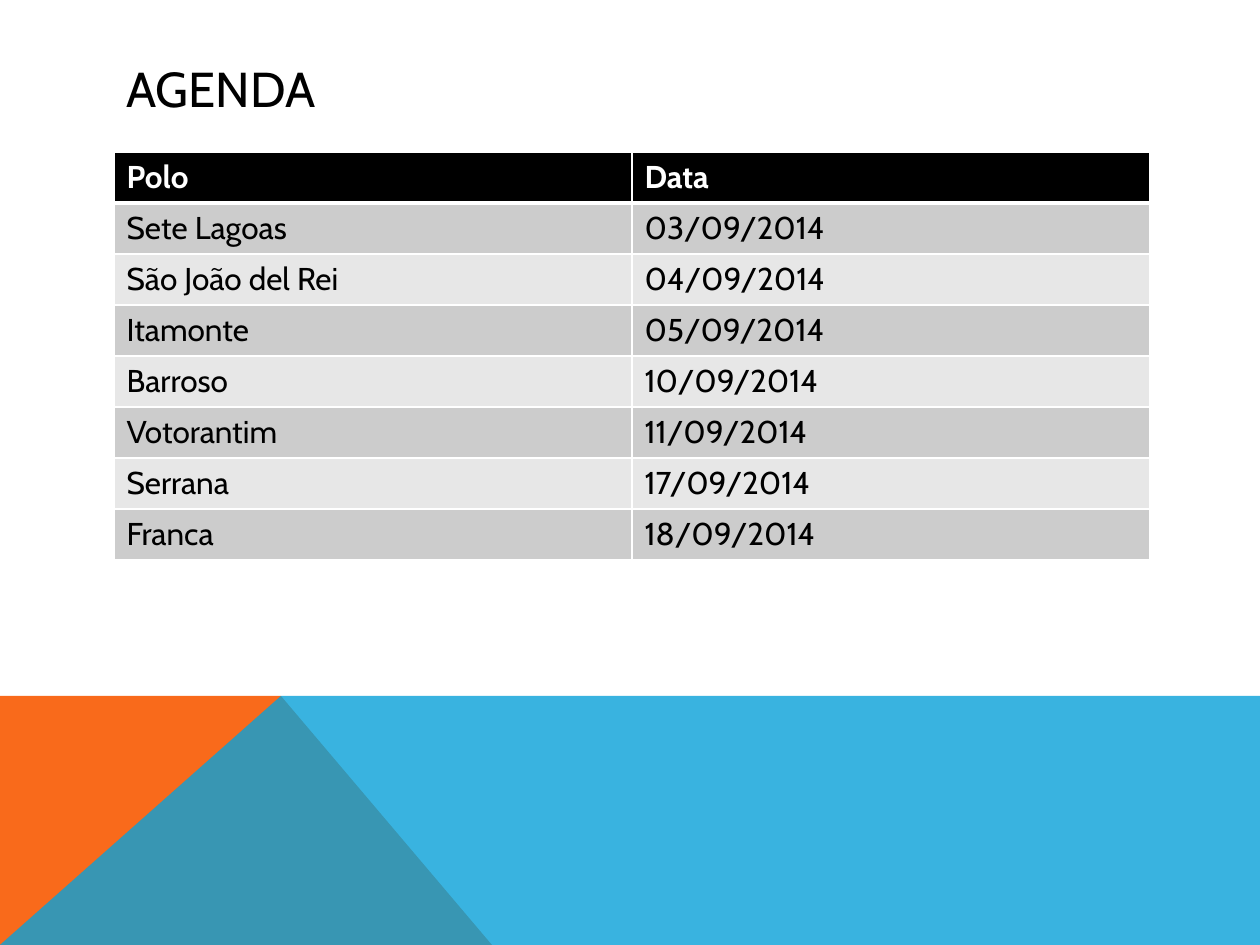
from dataclasses import dataclass

from lxml.etree import SubElement
from pptx import Presentation
from pptx.dml.color import RGBColor
from pptx.enum.text import MSO_ANCHOR
from pptx.oxml.ns import qn
from pptx.util import Emu, Pt

SCALE = 914400 / 126  # EMU in one px


@dataclass(frozen=True)
class Theme:
    font: str = "Cabin"
    title_size: int = 28
    table_size: int = 18
    black: str = "000000"
    white: str = "FFFFFF"
    orange: str = "F96A1B"
    blue: str = "08A1D9"
    bands: tuple = ("CCCCCC", "E7E7E7")


theme = Theme()


def px(length):
    return Emu(round(length * SCALE))


def style_paragraph(para, size, color, bold=False):
    para.font.name = theme.font
    para.font.size = Pt(size)
    para.font.bold = bold
    para.font.color.rgb = RGBColor.from_string(color)


deck = Presentation()
deck.slide_width, deck.slide_height = px(1260), px(945)
page = deck.slides.add_slide(deck.slide_layouts[6])

# Footer: orange triangle under a translucent blue band
footer_shapes = [
    ([(0, 945), (0, 696), (281, 696), (492, 945)], theme.orange, 100),
    ([(0, 945), (281, 696), (1260, 696), (1260, 945)], theme.blue, 80),
]
for points, color, opacity in footer_shapes:
    builder = page.shapes.build_freeform(*points[0], scale=SCALE)
    builder.add_line_segments(points[1:], close=True)
    shape = builder.convert_to_shape()
    shape.shadow.inherit = False
    shape.line.fill.background()
    shape.fill.solid()
    shape.fill.fore_color.rgb = RGBColor.from_string(color)
    if opacity < 100:
        tint = shape.fill._xPr.find(".//" + qn("a:srgbClr"))
        SubElement(tint, qn("a:alpha"), val=str(opacity * 1000))

# Title
box = page.shapes.add_textbox(px(114), px(50), px(1036), px(76))
box.text_frame.word_wrap = True
box.text_frame.vertical_anchor = MSO_ANCHOR.MIDDLE
para = box.text_frame.paragraphs[0]
para.text = "AGENDA"
style_paragraph(para, theme.title_size, theme.black)

# Agenda table
agenda = [
    ("Polo", "Data"),
    ("Sete Lagoas", "03/09/2014"),
    ("São João del Rei", "04/09/2014"),
    ("Itamonte", "05/09/2014"),
    ("Barroso", "10/09/2014"),
    ("Votorantim", "11/09/2014"),
    ("Serrana", "17/09/2014"),
    ("Franca", "18/09/2014"),
]
table = page.shapes.add_table(
    len(agenda), 2, px(114), px(152), px(1036), px(51 * len(agenda))
).table
for column in table.columns:
    column.width = px(518)

for row_index, entries in enumerate(agenda):
    table.rows[row_index].height = px(51)
    header = row_index == 0
    fill = theme.black if header else theme.bands[(row_index - 1) % 2]
    borders = {
        "lnL": 1,
        "lnR": 1,
        "lnT": 3 if row_index == 1 else 1,
        "lnB": 3 if header else 1,
    }
    for column_index, entry in enumerate(entries):
        cell = table.cell(row_index, column_index)
        para = cell.text_frame.paragraphs[0]
        para.text = entry
        style_paragraph(
            para, theme.table_size, theme.white if header else theme.black, header
        )

        # Borders come before the fill in the cell properties
        properties = cell._tc.get_or_add_tcPr()
        for edge, width in borders.items():
            line = SubElement(properties, qn("a:" + edge), w=str(Pt(width)))
            paint = SubElement(line, qn("a:solidFill"))
            SubElement(paint, qn("a:srgbClr"), val=theme.white)
        cell.fill.solid()
        cell.fill.fore_color.rgb = RGBColor.from_string(fill)

deck.save("out.pptx")
